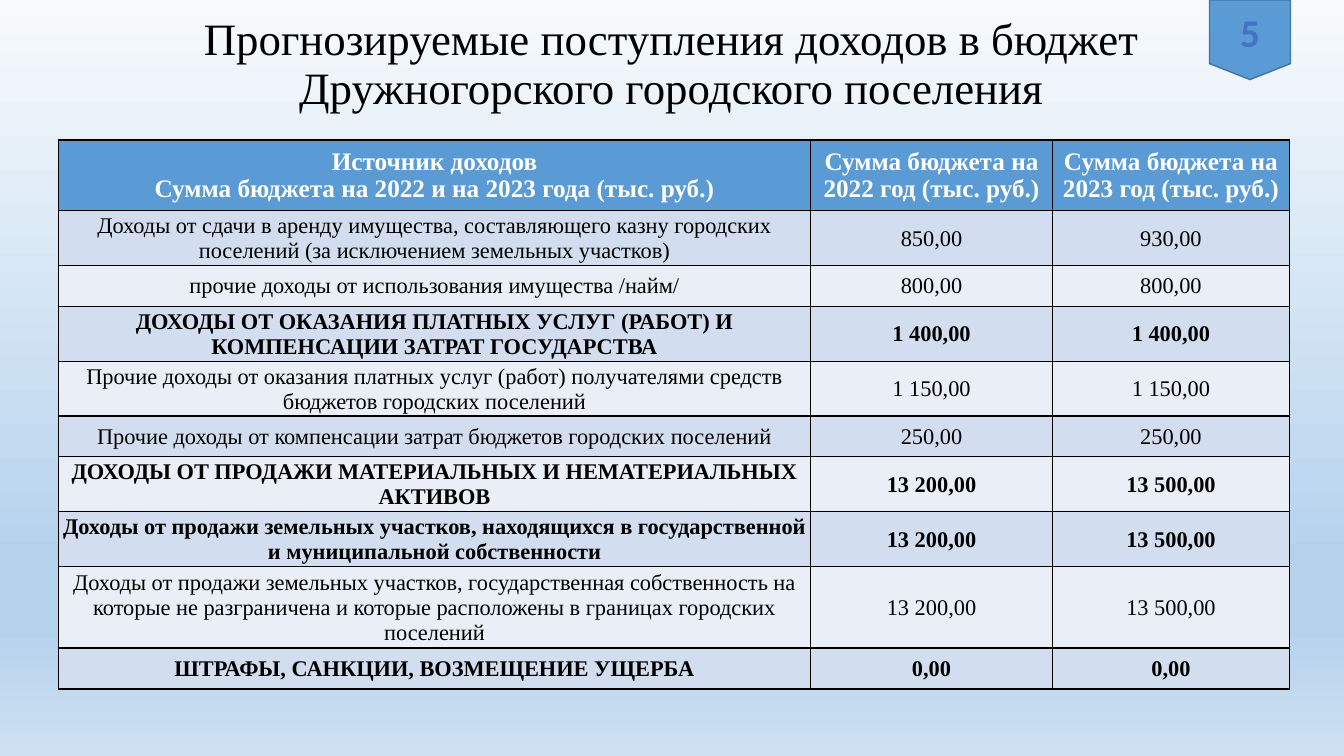
from copy import deepcopy
from typing import NamedTuple

from pptx import Presentation
from pptx.dml.color import RGBColor
from pptx.enum.shapes import MSO_SHAPE
from pptx.enum.text import MSO_ANCHOR, PP_ALIGN
from pptx.oxml import parse_xml
from pptx.oxml.ns import nsdecls, qn
from pptx.util import Emu, Inches, Pt

OFFPAGE = MSO_SHAPE.FLOWCHART_OFFPAGE_CONNECTOR
CENTER = PP_ALIGN.CENTER
MIDDLE, BOTTOM = MSO_ANCHOR.MIDDLE, MSO_ANCHOR.BOTTOM
SERIF = "Times New Roman"
W, H = Inches(13.33), Inches(7.5)
COLORS = {
    "black": "000000",
    "white": "FFFFFF",
    "blue": "5B9BD5",
    "outline": "43739E",
    "number": "4472C4",
    "odd": "D2DEEF",
    "even": "EAEFF7",
}
BACKGROUND = [(0, "F7FAFD"), (74, "B5D2EC"), (83, "B5D2EC"), (100, "CEE1F2")]


class Box(NamedTuple):
    left: float
    top: float
    width: float
    height: float

    def emu(self) -> tuple:
        return (across(self.left), down(self.top), across(self.width), down(self.height))


class Income(NamedTuple):
    source: str
    year_2022: str
    year_2023: str
    bold: bool = False


TITLE_BOX = Box(6.82, 0, 86.27, 15.73)
BADGE_BOX = Box(90, 0, 6.02, 10.53)
TABLE_LEFT, TABLE_TOP = 4.35, 18.53
COLUMNS = [55.96, 18, 17.63]
ROW_HEIGHT = 5.42
HEADER = Income(
    "Источник доходов\nСумма бюджета на 2022 и на 2023 года (тыс. руб.)",
    "Сумма бюджета на 2022 год (тыс. руб.)",
    "Сумма бюджета на 2023 год (тыс. руб.)",
    True,
)
INCOMES = [
    Income("Доходы от сдачи в аренду имущества, составляющего казну городских поселений "
           "(за исключением земельных участков)", "850,00", "930,00"),
    Income("прочие доходы от использования имущества /найм/", "800,00", "800,00"),
    Income("ДОХОДЫ ОТ ОКАЗАНИЯ ПЛАТНЫХ УСЛУГ (РАБОТ) И КОМПЕНСАЦИИ ЗАТРАТ ГОСУДАРСТВА",
           "1 400,00", "1 400,00", True),
    Income("Прочие доходы от оказания платных услуг (работ) получателями средств "
           "бюджетов городских поселений", "1 150,00", "1 150,00"),
    Income("Прочие доходы от компенсации затрат бюджетов городских поселений",
           "250,00", "250,00"),
    Income("ДОХОДЫ ОТ ПРОДАЖИ МАТЕРИАЛЬНЫХ И НЕМАТЕРИАЛЬНЫХ АКТИВОВ",
           "13 200,00", "13 500,00", True),
    Income("Доходы от продажи земельных участков, находящихся в государственной "
           "и муниципальной собственности", "13 200,00", "13 500,00", True),
    Income("Доходы от продажи земельных участков, государственная собственность на которые "
           "не разграничена и которые расположены в границах городских поселений",
           "13 200,00", "13 500,00"),
    Income("ШТРАФЫ, САНКЦИИ, ВОЗМЕЩЕНИЕ УЩЕРБА", "0,00", "0,00", True),
]


def across(percent: float) -> Emu:
    return Emu(round(W * percent / 100))


def down(percent: float) -> Emu:
    return Emu(round(H * percent / 100))


def rgb(name: str) -> RGBColor:
    return RGBColor.from_string(COLORS[name])


def write(tf, text: str, *, size: float, color: str = "black", font: str = SERIF,
          bold: bool = False, spacing: float = 1.0) -> None:
    tf.word_wrap = True
    for i, line in enumerate(text.split("\n")):
        p = tf.paragraphs[0] if i == 0 else tf.add_paragraph()
        p.alignment = CENTER
        p.line_spacing = spacing
        r = p.add_run()
        r.text = line
        r.font.name = font
        r.font.size = Pt(size)
        r.font.bold = bold
        r.font.color.rgb = rgb(color)


def paint_background(s) -> None:
    fill = s.background.fill
    fill.gradient()
    fill.gradient_angle = 270
    stops = s._element.find(".//" + qn("a:gsLst"))
    for stop in list(stops):
        stops.remove(stop)
    for position, color in BACKGROUND:
        stops.append(parse_xml(
            f'<a:gs {nsdecls("a")} pos="{position * 1000}"><a:srgbClr val="{color}"/></a:gs>'))


def add_borders(cell) -> None:
    tc_pr = cell._tc.get_or_add_tcPr()
    for i, side in enumerate(("lnL", "lnR", "lnT", "lnB")):
        tc_pr.insert(i, parse_xml(
            f'<a:{side} {nsdecls("a")} w="{Pt(1)}"><a:solidFill>'
            f'<a:srgbClr val="{COLORS["black"]}"/></a:solidFill></a:{side}>'))


def add_title(s, text: str) -> None:
    tf = s.shapes.add_textbox(*TITLE_BOX.emu()).text_frame
    tf.vertical_anchor = BOTTOM
    write(tf, text, size=32, spacing=0.9)


def add_income_table(s) -> None:
    rows = [HEADER, *INCOMES]
    box = Box(TABLE_LEFT, TABLE_TOP, sum(COLUMNS), ROW_HEIGHT * len(rows))
    table = s.shapes.add_table(len(rows), len(COLUMNS), *box.emu()).table
    for column, width in zip(table.columns, COLUMNS):
        column.width = across(width)
    for i, income in enumerate(rows):
        table.rows[i].height = down(ROW_HEIGHT)
        header = i == 0
        fill = "blue" if header else "odd" if i % 2 else "even"
        for cell, text in zip(table.rows[i].cells, income[:3]):
            cell.vertical_anchor = MIDDLE
            if not header:
                cell.margin_left = cell.margin_right = cell.margin_top = Inches(0.01)
                cell.margin_bottom = 0
            cell.fill.solid()
            cell.fill.fore_color.rgb = rgb(fill)
            add_borders(cell)
            write(cell.text_frame, text, size=18 if header else 16,
                  color="white" if header else "black", bold=income.bold)


def add_badge(s, number: str) -> None:
    sp = s.shapes.add_shape(OFFPAGE, *BADGE_BOX.emu())
    sp.shadow.inherit = False
    sp.fill.solid()
    sp.fill.fore_color.rgb = rgb("blue")
    sp.line.color.rgb = rgb("outline")
    sp.line.width = Pt(1)
    sp.text_frame.vertical_anchor = MIDDLE
    write(sp.text_frame, number, size=28, color="number", font="Calibri", bold=True)


def main() -> None:
    prs = Presentation()
    prs.slide_width, prs.slide_height = W, H
    s = prs.slides.add_slide(prs.slide_layouts[6])
    paint_background(s)
    add_title(s, "Прогнозируемые поступления доходов в бюджет "
                 "Дружногорского городского поселения")
    add_income_table(s)
    add_badge(s, "5")
    prs.save("out.pptx")


if __name__ == "__main__":
    main()
